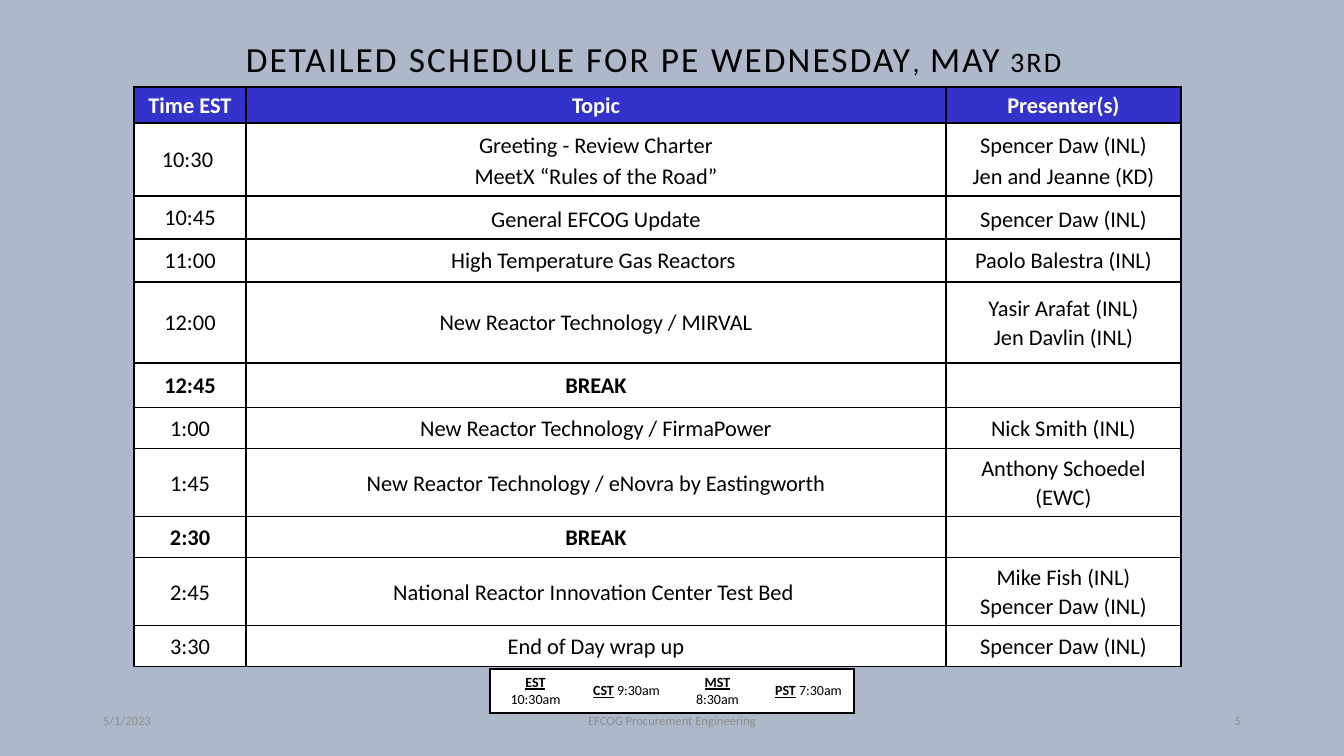
from pptx import Presentation
from pptx.dml.color import RGBColor
from pptx.enum.text import MSO_ANCHOR, PP_ALIGN
from pptx.oxml import parse_xml
from pptx.oxml.ns import nsdecls
from pptx.util import Pt

SCALE = 12192000 / 1344
BLACK, WHITE, HEADER_BLUE = "000000", "FFFFFF", "3333CC"
BACKDROP, FOOTER_GRAY = "ADB9CA", "8C8C8C"

HEADINGS = ["Time EST", "Topic", "Presenter(s)"]
SESSIONS = [
    # row height, time, topic, presenters
    (73, "10:30 ", "Greeting - Review Charter\nMeetX “Rules of the Road”",
     "Spencer Daw (INL)\nJen and Jeanne (KD)"),
    (43, "10:45", "General EFCOG Update", "Spencer Daw (INL)"),
    (43, "11:00", "High Temperature Gas Reactors ", "Paolo Balestra (INL)"),
    (81, "12:00", "New Reactor Technology / MIRVAL", "Yasir Arafat (INL)\nJen Davlin (INL)"),
    (45, "12:45", "BREAK", ""),
    (41, "1:00", "New Reactor Technology / FirmaPower", "Nick Smith (INL)"),
    (68, "1:45", "New Reactor Technology / eNovra by Eastingworth", "Anthony Schoedel (EWC)"),
    (41, "2:30", "BREAK", ""),
    (68, "2:45", "National Reactor Innovation Center Test Bed ", "Mike Fish (INL)\nSpencer Daw (INL)"),
    (41, "3:30", "End of Day wrap up", "Spencer Daw (INL)"),
]
ZONES = [("EST", "10:30am"), ("CST", "9:30am"), ("MST", "8:30am"), ("PST", "7:30am")]


def px(length):
    return round(length * SCALE)


def rgb(color):
    return RGBColor.from_string(color)


class ScheduleSlide:
    font_name = "Calibri"

    def __init__(self, deck):
        self.slide = deck.slides.add_slide(deck.slide_layouts[6])
        fill = self.slide.background.fill
        fill.solid()
        fill.fore_color.rgb = rgb(BACKDROP)

    def style(self, paragraph, size, color, bold=False, align=PP_ALIGN.CENTER, spacing=1.0):
        paragraph.alignment = align
        paragraph.line_spacing = spacing
        font = paragraph.font
        font.name, font.size, font.bold = self.font_name, Pt(size), bold
        font.color.rgb = rgb(color)

    def text(self, left, top, width, height, runs, size, color, **style):
        frame = self.slide.shapes.add_textbox(px(left), px(top), px(width), px(height)).text_frame
        frame.word_wrap = True
        frame.vertical_anchor = MSO_ANCHOR.MIDDLE
        paragraph = frame.paragraphs[0]
        self.style(paragraph, size, color, **style)
        for content in runs:
            paragraph.add_run().text = content
        return paragraph

    def table(self, left, top, widths, heights):
        frame = self.slide.shapes.add_table(len(heights), len(widths), px(left), px(top),
                                            px(sum(widths)), px(sum(heights)))
        table = frame.table
        table.first_row = table.horz_banding = False
        for column, width in zip(table.columns, widths):
            column.width = px(width)
        for row, height in zip(table.rows, heights):
            row.height = px(height)
        return table

    def cell(self, cell, fill, sides="LRTB"):
        """Fill a cell and draw 1 pt borders on the given sides only."""
        cell.vertical_anchor = MSO_ANCHOR.MIDDLE
        properties = cell._tc.get_or_add_tcPr()
        for side in "LRTB":
            paint = f'<a:solidFill><a:srgbClr val="{BLACK}"/></a:solidFill>' if side in sides else "<a:noFill/>"
            properties.append(parse_xml(f'<a:ln{side} {nsdecls("a")} w="12700">{paint}</a:ln{side}>'))
        cell.fill.solid()
        cell.fill.fore_color.rgb = rgb(fill)

    def schedule(self, left, top):
        heights = [36] + [session[0] for session in SESSIONS]
        rows = [HEADINGS] + [session[1:] for session in SESSIONS]
        table = self.table(left, top, [112, 700, 235], heights)
        for r, row in enumerate(rows):
            heading = r == 0
            for c, content in enumerate(row):
                cell = table.cell(r, c)
                self.cell(cell, HEADER_BLUE if heading else WHITE)
                cell.margin_left = cell.margin_right = px(8)
                cell.margin_top = cell.margin_bottom = px(3 if heading else 5)
                cell.text = content
                spacing = 1.15 if r in (1, 2) and c > 0 else 1.06
                for paragraph in cell.text_frame.paragraphs:
                    self.style(paragraph, 16, WHITE if heading else BLACK,
                               bold=heading or "BREAK" in row, spacing=spacing)

    def time_zones(self, left, top):
        table = self.table(left, top, [91] * len(ZONES), [44])
        for c, (zone, start) in enumerate(ZONES):
            cell = table.cell(0, c)
            outer = {0: "L", len(ZONES) - 1: "R"}.get(c, "")
            self.cell(cell, WHITE, "TB" + outer)
            paragraph = cell.text_frame.paragraphs[0]
            self.style(paragraph, 10, BLACK)
            label = paragraph.add_run()
            label.text = zone
            label.font.bold = label.font.underline = True
            paragraph.add_run().text = " " + start


def main():
    deck = Presentation()
    deck.slide_width, deck.slide_height = px(1344), px(756)
    page = ScheduleSlide(deck)

    title = page.text(93, 44, 1159, 35, ["DETAILED SCHEDULE FOR PE ", "WEDNESDAY, MAY 3rd"],
                      25.2, BLACK, spacing=0.9)
    for run in title.runs:
        run.font._element.set("spc", "150")
    title.runs[1].font._element.set("cap", "small")

    page.schedule(134, 87)
    page.time_zones(490, 669)

    for left, width, content, align in [
        (93, 302, "5/1/2023", PP_ALIGN.LEFT),
        (445, 454, "EFCOG Procurement Engineering", PP_ALIGN.CENTER),
        (949, 302, "5", PP_ALIGN.RIGHT),
    ]:
        page.text(left, 701, width, 40, [content], 9, FOOTER_GRAY, align=align)

    deck.save("out.pptx")


if __name__ == "__main__":
    main()
